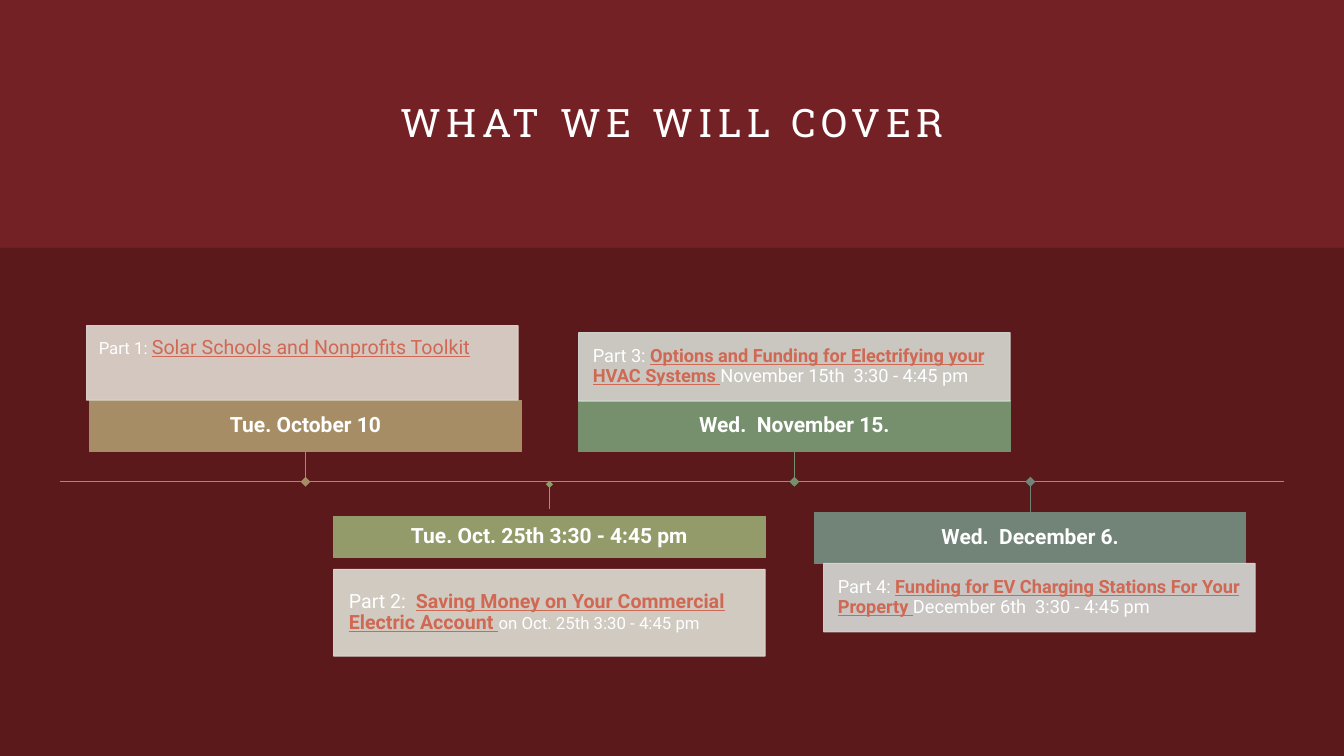
from dataclasses import dataclass

from lxml.etree import SubElement
from pptx import Presentation
from pptx.dml.color import RGBColor
from pptx.enum.shapes import MSO_CONNECTOR, MSO_SHAPE
from pptx.enum.text import MSO_ANCHOR as ANCHOR, PP_ALIGN as ALIGN
from pptx.oxml.ns import qn
from pptx.util import Inches, Pt

COLORS = {
    "background": "732124", "panel": "5B191B", "white": "FFFFFF", "link": "D06853",
    "sand": "A68D65", "olive": "929B69", "green": "768F6D", "teal": "728377",
    "sand_note": "E1DBD3", "olive_note": "DDDED4",
    "green_note": "D7DBD4", "teal_note": "D5D9D6",
}
SLIDE_W, SLIDE_H = Inches(13.33), Inches(7.5)
# Shares of the slide's width or height, in percent
CARD_W = 32.1
AXIS_LEFT, AXIS_RIGHT, AXIS_Y = 4.43, 95.57, 63.73


@dataclass(frozen=True)
class Box:
    left: float
    top: float
    height: float
    width: float = CARD_W


@dataclass(frozen=True)
class Span:
    text: str
    size: float
    link: bool = False
    bold: bool = False


@dataclass(frozen=True)
class Session:
    color: str
    date: str
    bar: Box
    note: Box
    spans: tuple[Span, ...]
    inset: float
    anchor: ANCHOR = ANCHOR.MIDDLE
    marker: float = 0.07
    marker_y: float = AXIS_Y
    stem: tuple[float, float] | None = None  # a stem that stands free of the bar


SESSIONS = (
    Session("sand", "Tue. October 10", Box(6.68, 52.93, 6.8), Box(6.45, 43.07, 9.87),
            (Span("Part 1: ", 12), Span("Solar Schools and Nonprofits Toolkit", 14, True)),
            0.12, ANCHOR.TOP),
    Session("olive", "Tue. Oct. 25th 3:30 - 4:45 pm",
            Box(24.83, 68.27, 5.47), Box(24.83, 75.33, 11.47),
            (Span("Part 2: \u00a0", 14),
             Span("Saving Money on Your Commercial Electric Account ", 14, True, True),
             Span("on Oct. 25th 3:30 - 4:45 pm", 12)),
            0.15, marker=0.05, marker_y=64.07, stem=(64.27, 67.33)),
    Session("green", "Wed.  November 15.", Box(43.06, 52.93, 6.8), Box(43.06, 44, 9.07),
            (Span("Part 3: ", 13),
             Span("Options and Funding for Electrifying your HVAC Systems ", 13, True, True),
             Span("November 15th\u00a0 3:30 - 4:45 pm", 13)), 0.14),
    Session("teal", "Wed.  December 6.", Box(60.61, 67.73, 6.8), Box(61.29, 74.53, 9.07),
            (Span("Part 4: ", 13),
             Span("Funding for EV Charging Stations For Your Property ", 13, True, True),
             Span("December 6th\u00a0 3:30 - 4:45 pm", 13)), 0.14),
)


def rgb(name: str) -> RGBColor:
    return RGBColor.from_string(COLORS[name])


def x(share: float) -> int:
    return round(SLIDE_W * share / 100)


def y(share: float) -> int:
    return round(SLIDE_H * share / 100)


def add_rect(slide, box: Box, color: str, outlined: bool = True):
    sp = slide.shapes.add_shape(MSO_SHAPE.RECTANGLE, x(box.left), y(box.top),
                                x(box.width), y(box.height))
    sp.shadow.inherit = False
    sp.fill.solid()
    sp.fill.fore_color.rgb = rgb(color)
    if outlined:
        sp.line.color.rgb = rgb(color)
        sp.line.width = Pt(0.75)
    else:
        sp.line.fill.background()
    return sp


def add_line(slide, start: tuple[float, float], end: tuple[float, float], color: str):
    line = slide.shapes.add_connector(MSO_CONNECTOR.STRAIGHT, x(start[0]), y(start[1]),
                                      x(end[0]), y(end[1]))
    line.line.color.rgb = rgb(color)
    line.line.width = Pt(0.75)
    SubElement(line._element.spPr, qn("a:effectLst"))
    return line


def add_text(sp, spans: tuple[Span, ...], inset: float, align: ALIGN, anchor: ANCHOR) -> None:
    tf = sp.text_frame
    tf.word_wrap = True
    tf.vertical_anchor = anchor
    tf.margin_left = tf.margin_right = tf.margin_top = tf.margin_bottom = Inches(inset)
    p = tf.paragraphs[0]
    p.alignment = align
    p.line_spacing = 0.9
    p.font.name = "Roboto"
    for span in spans:
        r = p.add_run()
        r.text = span.text
        r.font.size = Pt(span.size)
        r.font.bold = span.bold
        r.font.underline = span.link
        r.font.color.rgb = rgb("link" if span.link else "white")


def add_note(slide, session: Session) -> None:
    sp = add_rect(slide, session.note, f"{session.color}_note")
    for color in sp._element.spPr.iter(qn("a:srgbClr")):
        SubElement(color, qn("a:alpha"), val="90000")
    add_text(sp, session.spans, session.inset, ALIGN.LEFT, session.anchor)


def add_marker(slide, center: float, session: Session) -> None:
    side = Inches(session.marker)
    sp = slide.shapes.add_shape(MSO_SHAPE.RECTANGLE, x(center) - side // 2,
                                y(session.marker_y) - side // 2, side, side)
    sp.rotation = 45
    sp.shadow.inherit = False
    sp.fill.solid()
    sp.fill.fore_color.rgb = rgb(session.color)
    sp.line.fill.background()


def add_session(slide, session: Session) -> None:
    bar = add_rect(slide, session.bar, session.color)
    add_text(bar, (Span(session.date, 15, bold=True),), 0.08, ALIGN.CENTER, ANCHOR.MIDDLE)
    add_note(slide, session)
    center = session.bar.left + CARD_W / 2
    if session.stem:
        top, bottom = session.stem
        add_line(slide, (center, top), (center, bottom), session.color)
    else:
        above = session.bar.top < AXIS_Y
        edge = session.bar.top + (session.bar.height if above else 0)
        stem = add_line(slide, (center, edge), (center, AXIS_Y), session.color)
        stem.begin_connect(bar, 2 if above else 0)
    add_marker(slide, center, session)


def add_title(slide, text: str) -> None:
    title = slide.shapes.title
    title.left, title.top, title.width, title.height = x(8.85), y(7.87), x(82.3), y(16.4)
    tf = title.text_frame
    tf.margin_left = tf.margin_right = tf.margin_top = tf.margin_bottom = 0
    tf.vertical_anchor = ANCHOR.MIDDLE
    p = tf.paragraphs[0]
    p.alignment = ALIGN.CENTER
    p.font.name = "Roboto Slab"
    p.font.size = Pt(28)
    p.font.color.rgb = rgb("white")
    r = p.add_run()
    r.text = text
    r.font._element.set("spc", "400")


def main() -> None:
    prs = Presentation()
    prs.slide_width, prs.slide_height = SLIDE_W, SLIDE_H
    slide = prs.slides.add_slide(prs.slide_layouts[5])
    slide.background.fill.solid()
    slide.background.fill.fore_color.rgb = rgb("background")
    add_title(slide, "WHAT WE WILL COVER")
    add_rect(slide, Box(0, 32.8, 67.2, 100), "panel", outlined=False)
    add_line(slide, (AXIS_LEFT, AXIS_Y), (AXIS_RIGHT, AXIS_Y), "sand")
    for session in SESSIONS:
        add_session(slide, session)
    prs.save("out.pptx")


if __name__ == "__main__":
    main()
